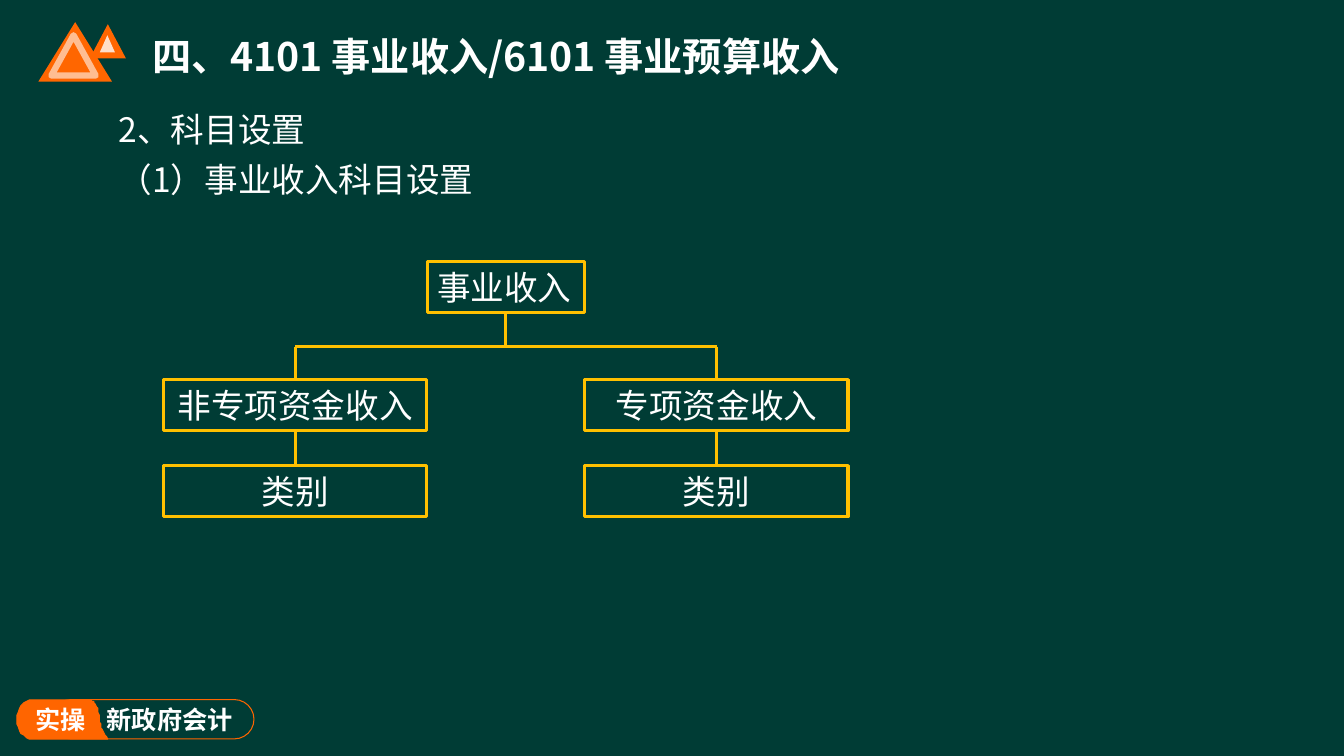
from lxml.etree import SubElement
from pptx import Presentation
from pptx.dml.color import RGBColor
from pptx.enum.shapes import MSO_CONNECTOR, MSO_SHAPE
from pptx.enum.text import MSO_ANCHOR, MSO_AUTO_SIZE, PP_ALIGN
from pptx.oxml.ns import qn
from pptx.util import Pt

# Content
TITLE = "四、4101 事业收入/6101 事业预算收入"
BODY = ["2、科目设置", "（1）事业收入科目设置"]
ROOT = "事业收入"
BRANCHES = [("非专项资金收入", "类别"), ("专项资金收入", "类别")]
# text, left, width, wraps
BADGE_TEXTS = [("实操", 18, 51, False), ("新政府会计", 61.2, 120.2, True)]

FONT = "Noto Sans CJK SC"
WHITE, ORANGE, GOLD, GREEN = "FFFFFF", "FF6500", "FFC000", "003C35"
PEAK = "FF6600"
# left, top, width, height, fill, fill opacity, outline opacity
PEAKS = [
    (27.4, 15.8, 52.6, 42.5, PEAK, 100, None),
    (64.1, 17.3, 25.9, 24.5, PEAK, 100, None),
    (36.7, 25.2, 31.7, 28.8, PEAK, 100, 57),
    (71.3, 25.2, 10.8, 12.2, WHITE, 79, None),
]
# Badge tab: start, then cubic curves (two controls and an end)
TAB_START = (71.3, 516.2)
TAB_CURVES = [
    ((70.6, 511.2), (70.6, 506.9), (68.4, 503.3)),
    ((67, 501.1), (64.8, 499.7), (62.6, 499.7)),
    ((62.6, 499.7), (23, 499.7), (23, 499.7)),
    ((17.3, 499.7), (12.2, 506.2), (12.2, 514.1)),
    ((12.2, 521.3), (17.3, 527.8), (23, 527.8)),
    ((23, 527.8), (77, 527.8), (77, 527.8)),
    ((73.4, 523.4), (72, 519.1), (71.3, 516.2)),
]

# Tree geometry
CENTER, SPREAD = 361.3, 150.5
ROOT_WIDTH, BRANCH_WIDTH, BOX_HEIGHT = 112.4, 188, 36.4
ROOT_TOP, RAIL, BRANCH_TOP, LEAF_TOP = 186.6, 247.6, 271.2, 332.6


def color(value):
    return RGBColor.from_string(value)


def set_opacity(fill_parent, percent):
    tint = next(fill_parent.iter(qn("a:srgbClr")))
    SubElement(tint, qn("a:alpha"), val=str(percent * 1000))


def style_text(para, size, bold=False, align=PP_ALIGN.LEFT):
    para.alignment = align
    font = para.font
    font.name, font.size, font.bold = FONT, Pt(size), bold
    font.color.rgb = color(WHITE)
    SubElement(font._element, qn("a:ea"), typeface=FONT)


def style_shape(shape, fill=None, line=None, width=0.75):
    shape.shadow.inherit = False
    if fill:
        shape.fill.solid()
        shape.fill.fore_color.rgb = color(fill)
    else:
        shape.fill.background()
    if line:
        shape.line.color.rgb = color(line)
        shape.line.width = Pt(width)
    else:
        shape.line.fill.background()


def place(shape, left, top, width, height):
    shape.left, shape.top = Pt(left), Pt(top)
    shape.width, shape.height = Pt(width), Pt(height)


def curve_point(start, first, second, end, t):
    u = 1 - t
    return tuple(u**3 * a + 3 * u * u * t * b + 3 * u * t * t * c + t**3 * d
                 for a, b, c, d in zip(start, first, second, end))


def add_box(page, text, center, top, width, align=PP_ALIGN.CENTER):
    box = page.shapes.add_shape(MSO_SHAPE.RECTANGLE, Pt(center - width / 2),
                                Pt(top), Pt(width), Pt(BOX_HEIGHT))
    style_shape(box, line=GOLD, width=2.25)
    frame = box.text_frame
    frame.word_wrap = True
    frame.vertical_anchor = MSO_ANCHOR.MIDDLE
    frame.text = text
    style_text(frame.paragraphs[0], 24, align=align)
    return box


def add_line(page, x1, y1, x2, y2, above=None, below=None):
    line = page.shapes.add_connector(MSO_CONNECTOR.STRAIGHT,
                                     Pt(x1), Pt(y1), Pt(x2), Pt(y2))
    line.line.color.rgb = color(GOLD)
    line.line.width = Pt(2.25)
    SubElement(line._element.spPr, qn("a:effectLst"))
    if above:
        line.begin_connect(above, 2)
    if below:
        line.end_connect(below, 0)


def add_badge(page):
    points, start = [], TAB_START
    for first, second, end in TAB_CURVES:
        points += [curve_point(start, first, second, end, step / 8)
                   for step in range(1, 9)]
        start = end
    builder = page.shapes.build_freeform(*TAB_START, scale=Pt(1))
    builder.add_line_segments(points, close=True)
    style_shape(builder.convert_to_shape(), ORANGE, ORANGE)

    pill = page.shapes.add_shape(MSO_SHAPE.ROUNDED_RECTANGLE, Pt(36.7),
                                 Pt(499.7), Pt(144.7), Pt(28.1))
    pill.adjustments[0] = 0.5
    style_shape(pill, line=ORANGE)

    for text, left, width, wraps in BADGE_TEXTS:
        label = page.shapes.add_textbox(Pt(left), Pt(499.7), Pt(width), Pt(28.8))
        frame = label.text_frame
        frame.word_wrap = wraps
        frame.vertical_anchor = MSO_ANCHOR.MIDDLE
        frame.text = text
        style_text(frame.paragraphs[0], 18, True, PP_ALIGN.CENTER)


def add_peaks(page):
    for left, top, width, height, fill, opacity, outline in PEAKS:
        peak = page.shapes.add_shape(MSO_SHAPE.FLOWCHART_EXTRACT, Pt(left),
                                     Pt(top), Pt(width), Pt(height))
        style_shape(peak, fill, WHITE if outline else None, 4.5)
        if opacity < 100:
            set_opacity(peak._element.spPr, opacity)
        if outline:
            edge = peak._element.spPr.find(qn("a:ln"))
            set_opacity(edge, outline)
            SubElement(edge, qn("a:round"))


def add_heading_and_list(page):
    title, body = page.placeholders
    place(title, 101.5, 13, 661, 53.3)
    title.text_frame.text = TITLE
    title.text_frame.vertical_anchor = MSO_ANCHOR.MIDDLE
    style_text(title.text_frame.paragraphs[0], 28, True)

    place(body, 29.5, 67, 733, 401.8)
    frame = body.text_frame
    frame.text = "\n".join(BODY)
    frame.auto_size = MSO_AUTO_SIZE.NONE
    for para in frame.paragraphs:
        style_text(para, 24)
        para.line_spacing = 1.25
        para.space_before = Pt(0)
        props = para._p.get_or_add_pPr()
        props.set("marL", "0")
        props.set("indent", str(Pt(48)))
        props.insert_element_before(props.makeelement(qn("a:buNone")),
                                    "a:tabLst", "a:defRPr", "a:extLst")


def add_tree(page):
    root = add_box(page, ROOT, CENTER, ROOT_TOP, ROOT_WIDTH, PP_ALIGN.LEFT)
    add_line(page, CENTER, ROOT_TOP + BOX_HEIGHT, CENTER, RAIL, above=root)
    add_line(page, CENTER - SPREAD, RAIL, CENTER + SPREAD, RAIL)
    for side, (branch_text, leaf_text) in zip((-1, 1), BRANCHES):
        x = CENTER + side * SPREAD
        branch = add_box(page, branch_text, x, BRANCH_TOP, BRANCH_WIDTH)
        leaf = add_box(page, leaf_text, x, LEAF_TOP, BRANCH_WIDTH)
        add_line(page, x, RAIL, x, BRANCH_TOP, below=branch)
        add_line(page, x, BRANCH_TOP + BOX_HEIGHT, x, LEAF_TOP, branch, leaf)


def main():
    deck = Presentation()
    deck.slide_width, deck.slide_height = Pt(960), Pt(540)
    page = deck.slides.add_slide(deck.slide_layouts[1])
    page.background.fill.solid()
    page.background.fill.fore_color.rgb = color(GREEN)
    add_badge(page)
    add_peaks(page)
    add_heading_and_list(page)
    add_tree(page)
    deck.save("out.pptx")


if __name__ == "__main__":
    main()
